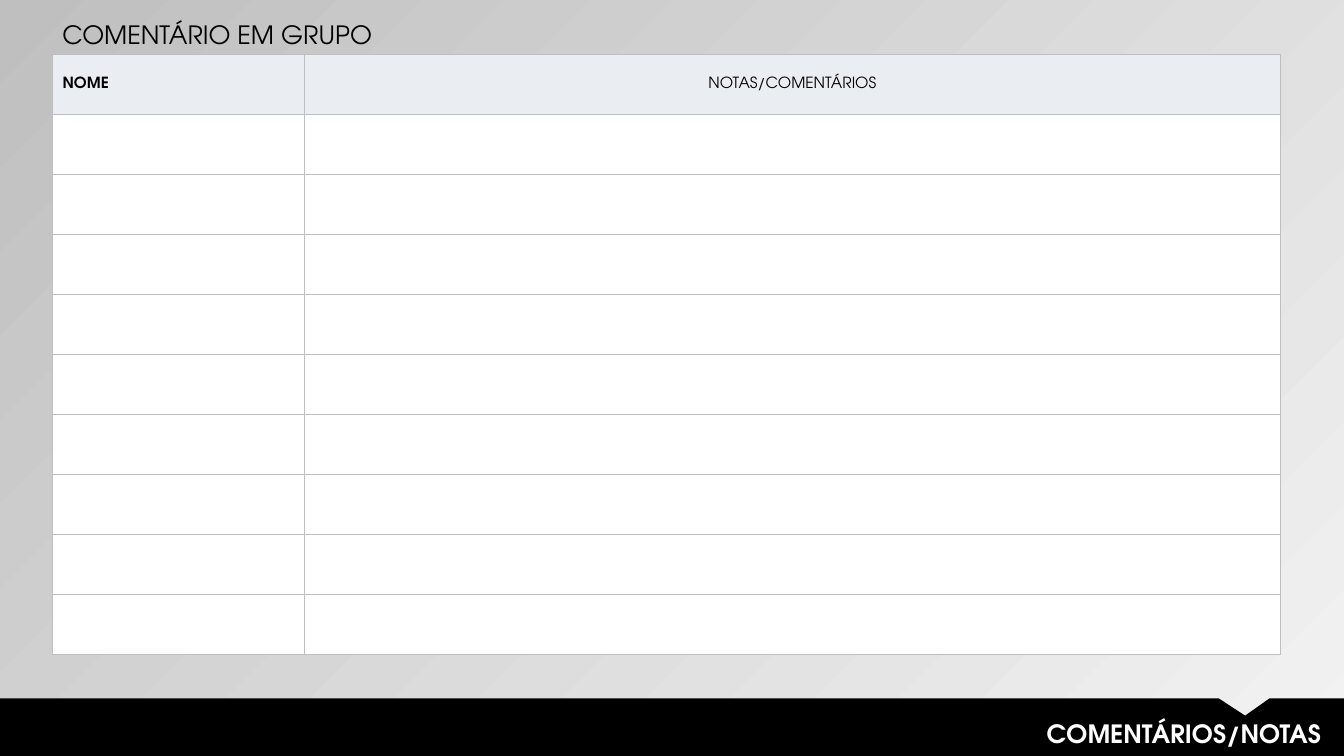
from dataclasses import dataclass

from lxml.etree import SubElement
from pptx import Presentation
from pptx.dml.color import RGBColor
from pptx.enum.text import MSO_ANCHOR, MSO_AUTO_SIZE, PP_ALIGN
from pptx.oxml.ns import qn
from pptx.slide import Slide
from pptx.table import _Cell
from pptx.text.text import _Paragraph
from pptx.util import Inches, Pt

FONT = "TeX Gyre Adventor"
BLACK = RGBColor(0x00, 0x00, 0x00)
WHITE = RGBColor(0xFF, 0xFF, 0xFF)
HEADER_FILL = RGBColor(0xEA, 0xEE, 0xF3)
BORDER_GRAY = RGBColor(0xBF, 0xBF, 0xBF)
LIGHT_GRAY = RGBColor(0xF2, 0xF2, 0xF2)

ROW_COUNT = 10
BANNER_POINTS = [(0, 6.93), (12.09, 6.93), (12.35, 7.1), (12.59, 6.93),
                 (13.33, 6.93), (13.33, 7.5), (0, 7.5)]


@dataclass
class Column:
    heading: str
    width: float
    alignment: PP_ALIGN
    bold: bool


@dataclass
class Heading:
    text: str
    left: float
    top: float
    width: float
    alignment: PP_ALIGN
    color: RGBColor
    bold: bool


COLUMNS = [
    Column("NOME", 2.5, PP_ALIGN.LEFT, True),
    Column("NOTAS/COMENTÁRIOS", 9.68, PP_ALIGN.CENTER, False),
]
HEADINGS = [
    Heading("COMENTÁRIOS/NOTAS", 4.14, 7.08, 9.06, PP_ALIGN.RIGHT, WHITE, True),
    Heading("COMENTÁRIO EM GRUPO", 0.52, 0.14, 4.44, PP_ALIGN.LEFT, BLACK, False),
]


def write(paragraph: _Paragraph, text: str, size: int, color: RGBColor,
          bold: bool, alignment: PP_ALIGN) -> None:
    paragraph.text = text
    paragraph.alignment = alignment
    paragraph.font.name = FONT
    paragraph.font.size = Pt(size)
    paragraph.font.bold = bold
    paragraph.font.color.rgb = color


def set_background(slide: Slide) -> None:
    fill = slide.background.fill
    fill.gradient()
    fill.gradient_angle = 135
    for stop, color in zip(fill.gradient_stops, (LIGHT_GRAY, BORDER_GRAY)):
        stop.color.rgb = color


def style_cell(cell: _Cell, color: RGBColor) -> None:
    # Borders come before the fill in the cell properties
    properties = cell._tc.get_or_add_tcPr()
    for side in ("a:lnL", "a:lnR", "a:lnT", "a:lnB"):
        line = SubElement(properties, qn(side), w=str(Pt(1)))
        solid = SubElement(line, qn("a:solidFill"))
        SubElement(solid, qn("a:srgbClr"), val=str(BORDER_GRAY))
    cell.fill.solid()
    cell.fill.fore_color.rgb = color


def add_notes_table(slide: Slide) -> None:
    frame = slide.shapes.add_table(ROW_COUNT, len(COLUMNS), Inches(0.52),
                                   Inches(0.54), Inches(12.18), Inches(5.96))
    table = frame.table
    table.first_row = False
    table.horz_banding = False
    for index, column in enumerate(COLUMNS):
        table.columns[index].width = Inches(column.width)
        for row in range(ROW_COUNT):
            style_cell(table.cell(row, index), WHITE if row else HEADER_FILL)
        header = table.cell(0, index)
        header.vertical_anchor = MSO_ANCHOR.MIDDLE
        header.margin_top = header.margin_bottom = 0
        write(header.text_frame.paragraphs[0], column.heading, 11, BLACK,
              column.bold, column.alignment)


def add_banner(slide: Slide) -> None:
    points = [(Inches(x), Inches(y)) for x, y in BANNER_POINTS]
    builder = slide.shapes.build_freeform(*points[0])
    builder.add_line_segments(points[1:], close=True)
    banner = builder.convert_to_shape()
    banner.shadow.inherit = False
    banner.fill.solid()
    banner.fill.fore_color.rgb = BLACK
    banner.line.fill.background()


def add_heading(slide: Slide, heading: Heading) -> None:
    box = slide.shapes.add_textbox(Inches(heading.left), Inches(heading.top),
                                   Inches(heading.width), Inches(0.4))
    box.text_frame.word_wrap = True
    box.text_frame.auto_size = MSO_AUTO_SIZE.SHAPE_TO_FIT_TEXT
    write(box.text_frame.paragraphs[0], heading.text, 18, heading.color,
          heading.bold, heading.alignment)


def main() -> None:
    presentation = Presentation()
    presentation.slide_width = Inches(13.33)
    presentation.slide_height = Inches(7.5)
    slide = presentation.slides.add_slide(presentation.slide_layouts[6])

    set_background(slide)
    add_notes_table(slide)
    add_banner(slide)
    for heading in HEADINGS:
        add_heading(slide, heading)

    presentation.save("out.pptx")


if __name__ == "__main__":
    main()
